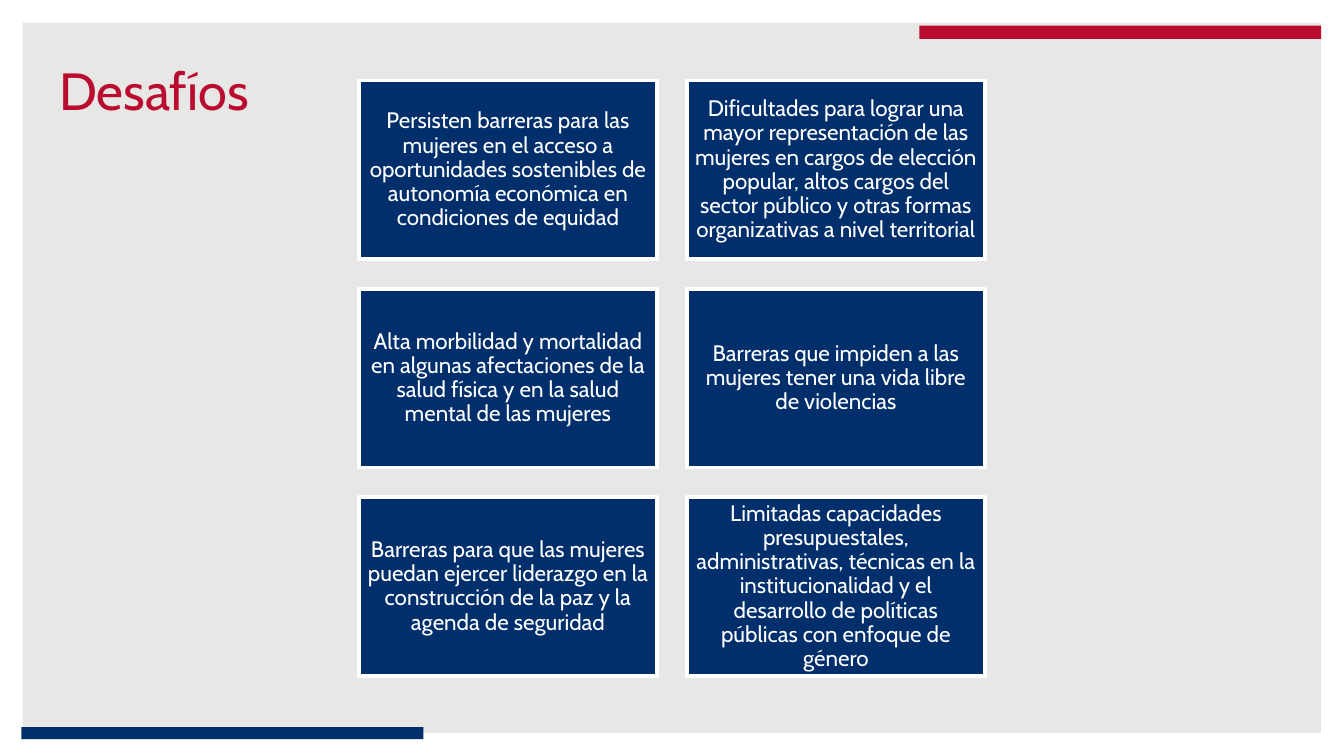
from dataclasses import dataclass

from pptx import Presentation
from pptx import util as u
from pptx.dml.color import RGBColor
from pptx.enum import shapes, text


@dataclass(frozen=True)
class Theme:
    font: str = "Cabin"
    background: str = "E7E7E5"
    white: str = "FFFFFF"
    red: str = "BA0C2F"
    navy: str = "002F6C"
    title_size: int = 28
    card_size: int = 12


CHALLENGES = [
    "Persisten barreras para las mujeres en el acceso a oportunidades sostenibles "
    "de autonomía económica en condiciones de equidad",
    "Dificultades para lograr una mayor representación de las mujeres en cargos de "
    "elección popular, altos cargos del sector público y otras formas organizativas "
    "a nivel territorial",
    "Alta morbilidad y mortalidad en algunas afectaciones de la salud física y en "
    "la salud mental de las mujeres",
    "Barreras que impiden a las mujeres tener una vida libre de violencias",
    "Barreras para que las mujeres puedan ejercer liderazgo en la construcción de "
    "la paz y la agenda de seguridad",
    "Limitadas capacidades presupuestales, administrativas, técnicas en la "
    "institucionalidad y el desarrollo de políticas públicas con enfoque de género",
]


def write_text(frame, content, *, font, size, color, align, spacing=1.0,
               margin_x=0.1, margin_y=0.05):
    frame.word_wrap = True
    frame.auto_size = text.MSO_AUTO_SIZE.NONE
    frame.vertical_anchor = text.MSO_ANCHOR.MIDDLE
    frame.margin_left = frame.margin_right = u.Inches(margin_x)
    frame.margin_top = frame.margin_bottom = u.Inches(margin_y)
    para = frame.paragraphs[0]
    para.alignment = align
    para.line_spacing = spacing
    span = para.add_run()
    span.text = content
    span.font.name = font
    span.font.size = u.Pt(size)
    span.font.color.rgb = RGBColor.from_string(color)


class SlideBuilder:
    def __init__(self, page, theme):
        self.page = page
        self.theme = theme

    def background(self):
        fill = self.page.background.fill
        fill.solid()
        fill.fore_color.rgb = RGBColor.from_string(self.theme.background)

    def shape(self, kind, left, top, width, height, fill, line=None):
        box = self.page.shapes.add_shape(
            kind, *map(u.Inches, (left, top, width, height)))
        box.shadow.inherit = False
        box.fill.solid()
        box.fill.fore_color.rgb = RGBColor.from_string(fill)
        if line:
            box.line.color.rgb = RGBColor.from_string(line)
            box.line.width = u.Pt(2)
        else:
            box.line.fill.background()
        return box

    def border(self, width, height):
        frame = self.shape(shapes.MSO_SHAPE.FRAME, 0, 0, width, height,
                           self.theme.white)
        frame.adjustments[0] = 0.03

    def bar(self, left, top, width, height, color):
        self.shape(shapes.MSO_SHAPE.RECTANGLE, left, top, width, height, color)

    def title(self, content, left, top, width, height):
        box = self.page.shapes.title
        box.left, box.top = u.Inches(left), u.Inches(top)
        box.width, box.height = u.Inches(width), u.Inches(height)
        write_text(box.text_frame, content, font=self.theme.font,
                   size=self.theme.title_size, color=self.theme.red,
                   align=text.PP_ALIGN.LEFT)

    def card(self, content, left, top, width, height):
        box = self.shape(shapes.MSO_SHAPE.RECTANGLE, left, top, width, height,
                         self.theme.navy, line=self.theme.white)
        write_text(box.text_frame, content, font=self.theme.font,
                   size=self.theme.card_size, color=self.theme.white,
                   align=text.PP_ALIGN.CENTER, spacing=0.9, margin_x=0.05)


def main():
    # Widescreen page, 16:9
    slide_width = 10
    slide_height = slide_width * 9 / 16
    deck = Presentation()
    deck.slide_width = u.Inches(slide_width)
    deck.slide_height = u.Inches(slide_height)
    theme = Theme()
    builder = SlideBuilder(deck.slides.add_slide(deck.slide_layouts[5]), theme)

    # Background, white border and accent bars
    builder.background()
    builder.border(slide_width, slide_height)
    builder.bar(6.84, 0.19, 2.99, 0.1, theme.red)
    builder.bar(0.16, 5.41, 2.99, 0.09, theme.navy)

    # Title
    builder.title("Desafíos", 0.34, -0.02, 7.86, 1.37)

    # Challenge cards in two columns
    columns, gap = 2, 0.22
    card_width, card_height = 2.22, 1.33
    for index, challenge in enumerate(CHALLENGES):
        row, column = divmod(index, columns)
        builder.card(challenge,
                     2.67 + column * (card_width + gap),
                     0.6 + row * (card_height + gap),
                     card_width, card_height)

    deck.save("out.pptx")


if __name__ == "__main__":
    main()
